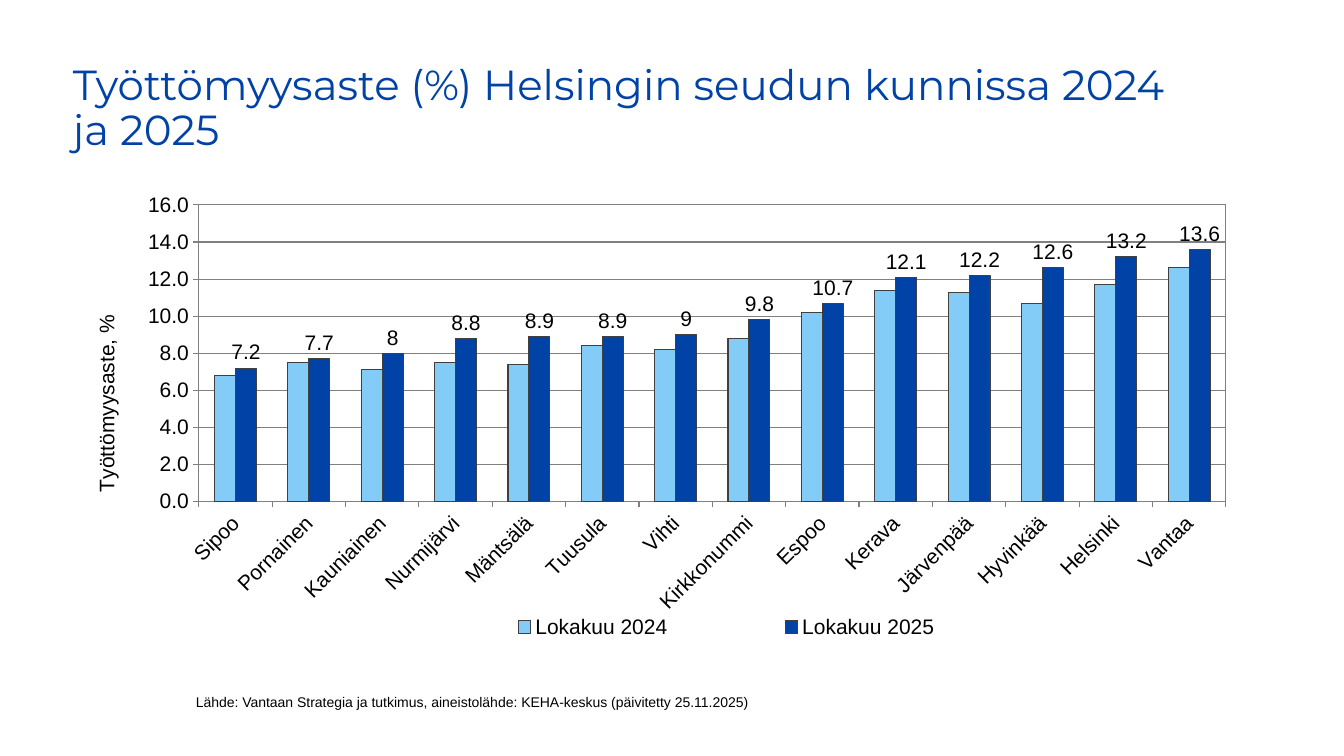
from pptx import Presentation
from pptx import util as u
from pptx.chart.data import CategoryChartData
from pptx.dml.color import RGBColor
from pptx.enum import chart as ch, text as t
from pptx.oxml import parse_xml
from pptx.oxml.ns import nsdecls, qn

PX = 9525
HUES = {"title": "0042A6", "old": "84CCF8", "new": "0042A5",
        "edge": "404040", "grid": "808080", "ink": "000000"}
TOWNS = ["Sipoo", "Pornainen", "Kauniainen", "Nurmijärvi", "Mäntsälä",
         "Tuusula", "Vihti", "Kirkkonummi", "Espoo", "Kerava", "Järvenpää",
         "Hyvinkää", "Helsinki", "Vantaa"]
RATES = {
    "Lokakuu 2024": [6.8, 7.5, 7.1, 7.5, 7.4, 8.4, 8.2, 8.8, 10.2, 11.4,
                     11.3, 10.7, 11.7, 12.6],
    "Lokakuu 2025": [7.2, 7.7, 8, 8.8, 8.9, 8.9, 9, 9.8, 10.7, 12.1, 12.2,
                     12.6, 13.2, 13.6],
}


def hue(name):
    return RGBColor.from_string(HUES[name])


def box(*sides):
    return [side * PX for side in sides]


def style(font, size=15, face="Arial", color="ink"):
    font.size = u.Pt(size)
    font.name = face
    font.bold = False
    font.color.rgb = hue(color)


def write(slide, words, at, anchor=t.MSO_ANCHOR.TOP, lead=1.0, **look):
    frame = slide.shapes.add_textbox(*box(*at)).text_frame
    frame.word_wrap = True
    frame.vertical_anchor = anchor
    para = frame.paragraphs[0]
    para.line_spacing = lead
    run = para.add_run()
    run.text = words
    style(run.font, **look)


def stroke(line, color):
    line.color.rgb = hue(color)
    line.width = u.Pt(0.75)


def place(part, index, x, y, w, h, inner=False):
    for old in part.findall(qn("c:layout")):
        part.remove(old)
    target = '<c:layoutTarget val="inner"/>' if inner else ""
    sizes = "".join(f'<c:{key} val="{val}"/>'
                    for key, val in zip("xywh", (x, y, w, h)))
    part.insert(index, parse_xml(
        f'<c:layout {nsdecls("c")}><c:manualLayout>{target}'
        f'<c:xMode val="edge"/><c:yMode val="edge"/>{sizes}'
        '</c:manualLayout></c:layout>'))


def frame_plot(chart):
    area = chart._chartSpace.chart.plotArea
    place(area, 0, 0.1, 0.037, 0.886, 0.645, inner=True)
    area.append(parse_xml(
        f'<c:spPr {nsdecls("c", "a")}><a:noFill/><a:ln w="9525"><a:solidFill>'
        f'<a:srgbClr val="{HUES["grid"]}"/></a:solidFill></a:ln></c:spPr>'))


def set_axes(chart):
    cat, val = chart.category_axis, chart.value_axis
    for axis in (cat, val):
        axis.major_tick_mark = ch.XL_TICK_MARK.OUTSIDE
        axis.minor_tick_mark = ch.XL_TICK_MARK.NONE
        style(axis.tick_labels.font)
        stroke(axis.format.line, "grid")
    turn = cat._element.find(qn("c:txPr")).find(qn("a:bodyPr"))
    turn.set("rot", "-2700000")
    turn.set("vert", "horz")
    val.minimum_scale, val.maximum_scale, val.major_unit = 0, 16, 2
    val.tick_labels.number_format = "0.0"
    val.tick_labels.number_format_is_linked = False
    stroke(val.major_gridlines.format.line, "grid")
    frame = val.axis_title.text_frame
    frame.text = "Työttömyysaste, %"
    style(frame.paragraphs[0].runs[0].font)


def set_bars(chart):
    plot = chart.plots[0]
    plot.gap_width, plot.overlap = 150, 0
    plot.vary_by_categories = False
    for bars, color in zip(plot.series, ("old", "new")):
        bars.format.fill.solid()
        bars.format.fill.fore_color.rgb = hue(color)
        stroke(bars.format.line, "edge")
    tags = plot.series[1].data_labels
    tags.show_value = True
    tags.position = ch.XL_LABEL_POSITION.OUTSIDE_END
    style(tags.font)


def set_key(chart):
    chart.has_legend = True
    key = chart.legend
    key.position = ch.XL_LEGEND_POSITION.BOTTOM
    key.include_in_layout = False
    style(key.font)
    place(key._element, 1, 0.28, 0.92, 0.55, 0.07)


def draw(slide, at):
    data = CategoryChartData()
    data.categories = TOWNS
    for name, rates in RATES.items():
        data.add_series(name, rates)
    chart = slide.shapes.add_chart(
        ch.XL_CHART_TYPE.COLUMN_CLUSTERED, *box(*at), data).chart
    chart.has_title = False
    style(chart.font)
    set_axes(chart)
    set_bars(chart)
    set_key(chart)
    frame_plot(chart)


def main():
    deck = Presentation()
    deck.slide_width, deck.slide_height = box(1280, 720)
    slide = deck.slides.add_slide(deck.slide_layouts[6])
    write(slide, "Työttömyysaste (%) Helsingin seudun kunnissa 2024 ja 2025",
          (60, 52, 1063, 105), anchor=t.MSO_ANCHOR.MIDDLE, lead=0.9,
          size=30, face="Montserrat", color="title")
    write(slide, "Lähde: Vantaan Strategia ja tutkimus, aineistolähde: "
          "KEHA-keskus (päivitetty 25.11.2025)", (177, 656, 557, 38), size=10)
    draw(slide, (79, 179, 1104, 438))
    deck.save("out.pptx")


if __name__ == "__main__":
    main()
